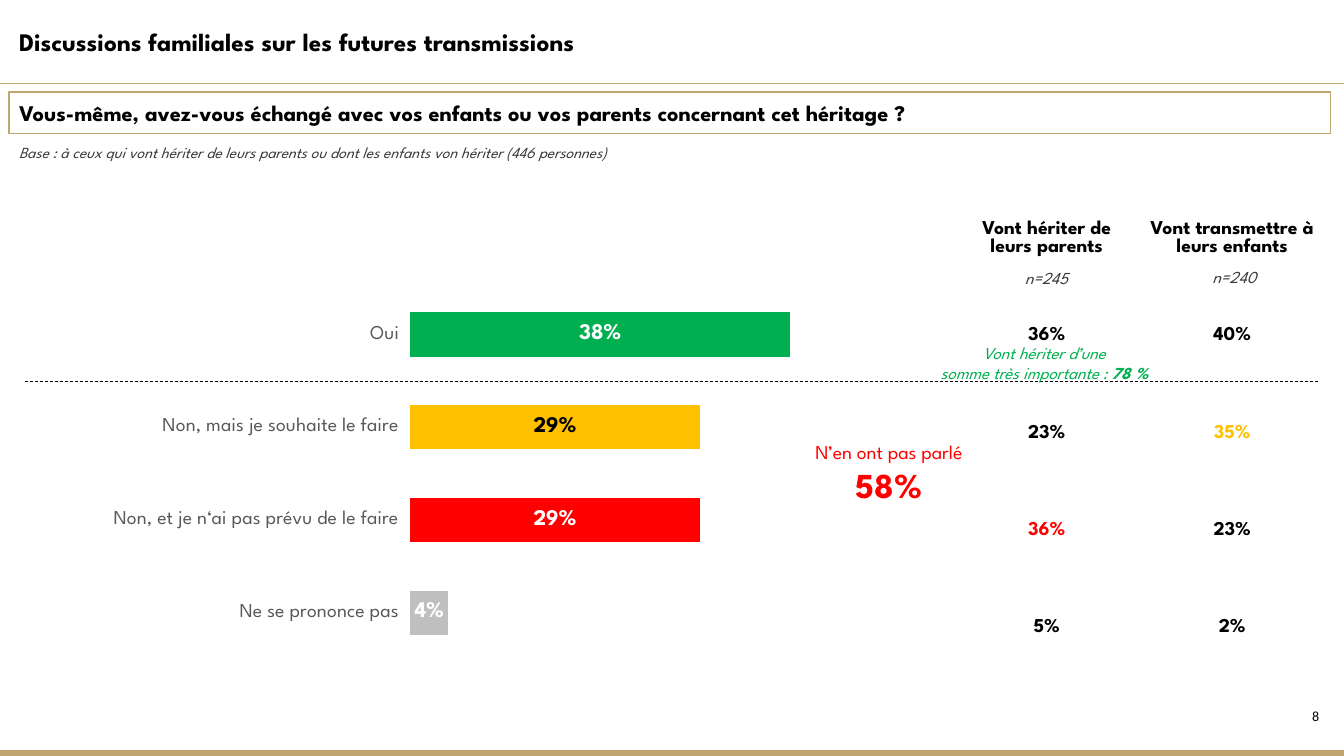
from dataclasses import dataclass

from lxml.etree import SubElement
from pptx import Presentation
from pptx.chart.data import CategoryChartData
from pptx.dml.color import RGBColor
from pptx.enum.chart import XL_CHART_TYPE as Chart, XL_LABEL_POSITION as LabelPos
from pptx.enum.chart import XL_TICK_LABEL_POSITION as TickPos
from pptx.enum.dml import MSO_LINE_DASH_STYLE as Dash
from pptx.enum.shapes import MSO_CONNECTOR, MSO_SHAPE
from pptx.enum.text import MSO_ANCHOR as Anchor, MSO_AUTO_SIZE as AutoSize, PP_ALIGN as Align
from pptx.oxml import parse_xml
from pptx.oxml.ns import nsdecls, qn
from pptx.util import Pt

PX = 914400 / 100.8
W, H = 1344, 756


@dataclass(frozen=True)
class Theme:
    font: str = "League Spartan"
    number_font: str = "Calibri"
    black: str = "000000"
    white: str = "FFFFFF"
    gold: str = "C0A56F"
    dark: str = "3B3838"
    label: str = "595959"
    green: str = "00B050"
    amber: str = "FFC000"
    red: str = "FF0000"
    grey: str = "BFBFBF"
    title: int = 18
    question: int = 16
    body: int = 14
    note: int = 12
    base: int = 11
    small: int = 10
    total: int = 25


T = Theme()


def rgb(color):
    return RGBColor.from_string(color)


def px(*lengths):
    return [round(n * PX) for n in lengths]


def style(font, size, color=T.black, bold=False, italic=False, name=T.font):
    font.name, font.size, font.bold, font.italic = name, Pt(size), bold, italic
    font.color.rgb = rgb(color)


def write(p, text, align=Align.LEFT, **fmt):
    """Append text to a paragraph; a newline becomes a line break."""
    p.alignment = align
    for i, line in enumerate(text.split("\n")):
        if i:
            p.add_line_break()
        r = p.add_run()
        r.text = line
        style(r.font, **fmt)


class SlideBuilder:
    def __init__(self, prs, layout, theme):
        self.t = theme
        self.slide = prs.slides.add_slide(prs.slide_layouts[layout])
        self.shapes = self.slide.shapes

    def placeholder(self, idx, box, text, anchor=Anchor.TOP, **fmt):
        sp = self.slide.placeholders[idx]
        sp.left, sp.top, sp.width, sp.height = px(*box)
        tf = sp.text_frame
        tf.word_wrap, tf.auto_size, tf.vertical_anchor = True, AutoSize.NONE, anchor
        p = tf.paragraphs[0]
        pPr = p._p.get_or_add_pPr()
        pPr.set("marL", "0")
        pPr.set("indent", "0")
        SubElement(pPr, qn("a:buNone"))
        p.space_before = Pt(0)
        write(p, text, **fmt)
        return sp

    def text(self, box, *paragraphs, anchor=Anchor.TOP, align=Align.CENTER):
        """Each paragraph is a list of (text, format) runs."""
        tf = self.shapes.add_textbox(*px(*box)).text_frame
        tf.word_wrap, tf.vertical_anchor = True, anchor
        for i, runs in enumerate(paragraphs):
            p = tf.add_paragraph() if i else tf.paragraphs[0]
            for text, fmt in runs:
                write(p, text, align, **fmt)

    def rule(self, x1, x2, y, color, dash=None):
        line = self.shapes.add_connector(MSO_CONNECTOR.STRAIGHT, *px(x1, y, x2, y))
        line.line.color.rgb, line.line.width = rgb(color), Pt(0.5)
        if dash:
            line.line.dash_style = dash
        SubElement(line._element.spPr, qn("a:effectLst"))

    def band(self, box, color):
        sp = self.shapes.add_shape(MSO_SHAPE.RECTANGLE, *px(*box))
        sp.shadow.inherit = False
        sp.fill.solid()
        sp.fill.fore_color.rgb = sp.line.color.rgb = rgb(color)
        sp.line.width = Pt(1)

    def bars(self, box, answers, plot):
        """Answers are (category, value, bar colour, label colour)."""
        data = CategoryChartData(number_format="0%")
        data.categories = [a[0] for a in answers]
        data.add_series("Series 1", [a[1] for a in answers])
        chart = self.shapes.add_chart(Chart.BAR_STACKED, *px(*box), data).chart
        chart.has_legend = chart.has_title = False
        style(chart.font, self.t.small)

        cat, val = chart.category_axis, chart.value_axis
        cat.reverse_order = True
        cat.format.line.fill.background()
        cat.tick_label_position = TickPos.LOW
        style(cat.tick_labels.font, self.t.body, self.t.label)
        val.minimum_scale, val.maximum_scale = 0, 0.4
        val.has_major_gridlines = val.visible = False

        bar_plot = chart.plots[0]
        bar_plot.gap_width, bar_plot.overlap, bar_plot.vary_by_categories = 100, 100, False
        series = bar_plot.series[0]
        labels = series.data_labels
        labels.show_value, labels.position = True, LabelPos.CENTER
        labels.number_format, labels.number_format_is_linked = "0%", False
        style(labels.font, self.t.question, self.t.white, bold=True)
        for i, (_, _, color, label_color) in enumerate(answers):
            point = series.points[i]
            point.format.fill.solid()
            point.format.fill.fore_color.rgb = rgb(color)
            point.format.line.color.rgb = rgb(self.t.white)
            point.format.line.width = Pt(1.5)
            if label_color != self.t.white:
                style(point.data_label.font, self.t.question, label_color, bold=True)
                point.data_label.position = LabelPos.CENTER

        # Fixed plot area
        area = chart._chartSpace.chart.plotArea
        for old in area.findall(qn("c:layout")):
            area.remove(old)
        parts = "".join(f'<c:{k} val="{v}"/>' for k, v in zip("xywh", plot))
        modes = '<c:layoutTarget val="inner"/><c:xMode val="edge"/><c:yMode val="edge"/>'
        area.insert(0, parse_xml(f'<c:layout {nsdecls("c")}><c:manualLayout>{modes}{parts}'
                                 "</c:manualLayout></c:layout>"))

    def table(self, box, rows):
        """Each cell is a (text, colour) pair."""
        table = self.shapes.add_table(len(rows), len(rows[0]), *px(*box)).table
        table.horz_banding = False
        for i, row in enumerate(rows):
            for j, (text, color) in enumerate(row):
                cell = table.cell(i, j)
                cell.fill.background()
                cell.vertical_anchor = Anchor.MIDDLE
                write(cell.text_frame.paragraphs[0], text, Align.CENTER,
                      size=self.t.body, color=color, bold=True)


def main():
    prs = Presentation()
    prs.slide_width, prs.slide_height = px(W, H)
    s = SlideBuilder(prs, 3, T)

    # Page frame
    s.text((1234, 703, 95, 27), [("8", dict(size=T.small, name=T.number_font))], align=Align.RIGHT)
    s.rule(0, W, 83, T.gold)
    s.band((0, 751, W, 5), T.gold)

    # Title, question and base
    s.placeholder(0, (9, 21, 1104, 40), "Discussions familiales sur les futures transmissions",
                  size=T.title, bold=True)
    question = s.placeholder(
        1, (9, 92, 1322, 42),
        "Vous-même, avez-vous échangé avec vos enfants ou vos parents concernant cet héritage ?",
        Anchor.MIDDLE, size=T.question, bold=True)
    question.line.color.rgb, question.line.width = rgb(T.gold), Pt(0.75)
    s.placeholder(
        2, (9, 138, 1322, 27),
        "Base : à ceux qui vont hériter de leurs parents ou dont les enfants von hériter (446 personnes)",
        size=T.base, color=T.dark, italic=True)

    # Answers
    s.bars((19, 193, 1124, 504), [
        ("Oui", 0.38, T.green, T.white),
        ("Non, mais je souhaite le faire", 0.29, T.amber, T.black),
        ("Non, et je n‘ai pas prévu de le faire", 0.29, T.red, T.white),
        ("Ne se prononce pas", 0.04, T.grey, T.white),
    ], plot=(0.347, 0.189, 0.358, 0.736))

    # Results by group
    s.table((954, 190, 371, 487), [
        [("Vont hériter de leurs parents", T.black), ("Vont transmettre à leurs enfants", T.black)],
        [("36%", T.black), ("40%", T.black)],
        [("23%", T.black), ("35%", T.amber)],
        [("36%", T.red), ("23%", T.black)],
        [("5%", T.black), ("2%", T.black)],
    ])
    for x, y, size in ((1004, 263, "n=245"), (1192, 262, "n=240")):
        s.text((x, y, 85, 27), [(size, dict(size=T.note, color=T.dark, italic=True))])

    # Divider and call-outs
    s.rule(25, 1318, 381, T.black, Dash.DASH)
    s.text((771, 435, 236, 77),
           [("N’en ont pas parlé", dict(size=T.body, color=T.red))],
           [("58%", dict(size=T.total, color=T.red, bold=True))])
    remark = dict(size=T.note, color=T.green, italic=True)
    s.text((911, 333, 267, 60),
           [("Vont hériter d’une\nsomme très importante : ", remark), ("78 %", dict(remark, bold=True))],
           anchor=Anchor.MIDDLE)

    prs.save("out.pptx")


if __name__ == "__main__":
    main()
